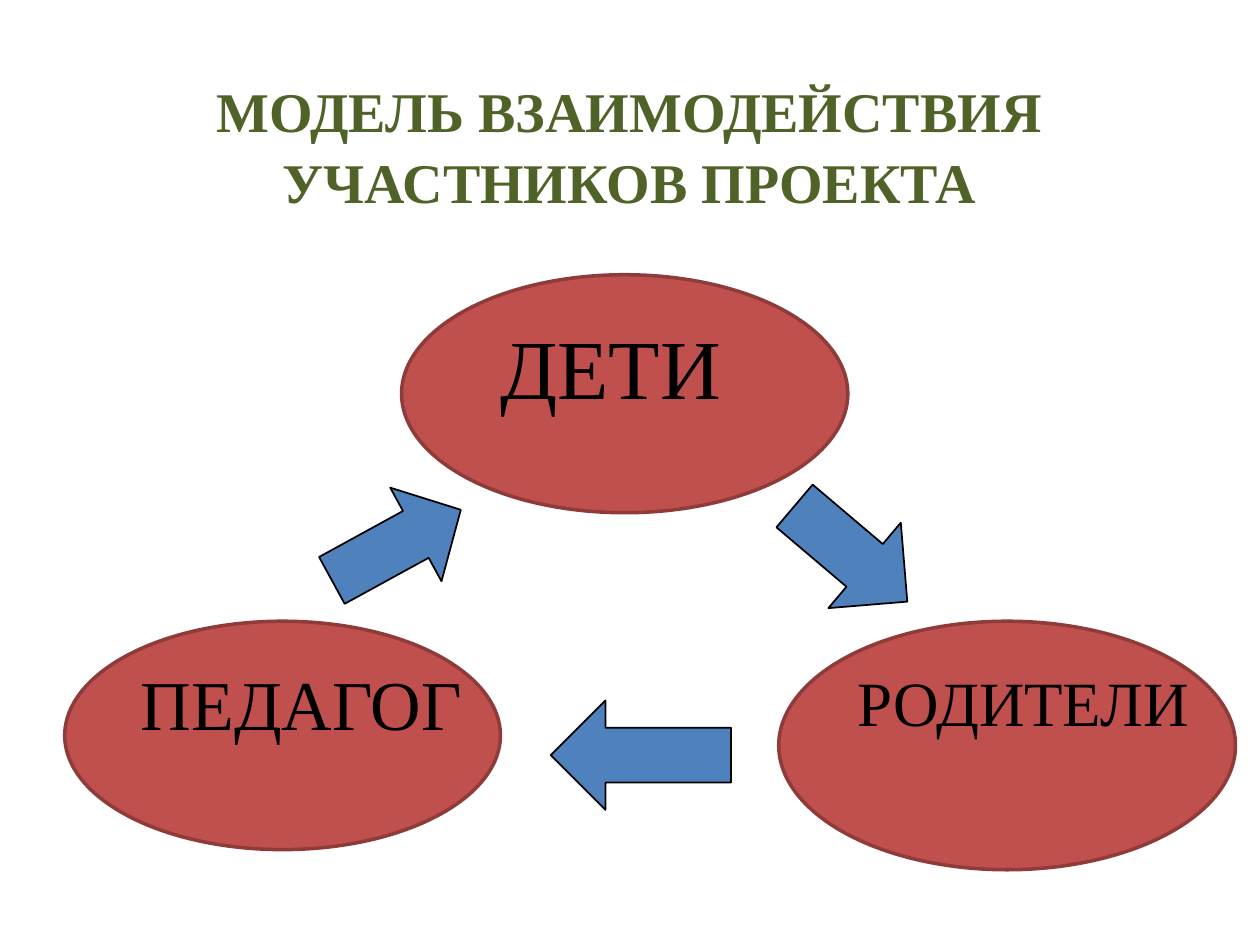
from dataclasses import dataclass

from pptx import Presentation
from pptx.dml.color import RGBColor
from pptx.enum.shapes import MSO_SHAPE
from pptx.enum.text import MSO_ANCHOR, PP_ALIGN
from pptx.shapes.autoshape import Shape
from pptx.slide import Slide
from pptx.text.text import Font
from pptx.util import Pt

FONT_NAME = "Times New Roman"
TITLE_COLOR = "4F6228"
OVAL_FILL = "C0504D"
OVAL_LINE = "8E3B39"
ARROW_FILL = "4F81BD"
BLACK = "000000"


@dataclass(frozen=True)
class Frame:
    left: float
    top: float
    width: float
    height: float

    def lengths(self) -> tuple[Pt, Pt, Pt, Pt]:
        return Pt(self.left), Pt(self.top), Pt(self.width), Pt(self.height)


@dataclass(frozen=True)
class Participant:
    name: str
    frame: Frame
    font_size: float


@dataclass(frozen=True)
class Arrow:
    kind: MSO_SHAPE
    frame: Frame
    rotation: float
    head_ratio: float


PARTICIPANTS = [
    Participant(" ДЕТИ", Frame(229.5, 157, 255, 136), 48),
    Participant("ПЕДАГОГ", Frame(37, 355, 249, 130.5), 40),
    Participant("РОДИТЕЛИ", Frame(445, 355, 261, 142), 36),
]

ARROWS = [
    Arrow(MSO_SHAPE.RIGHT_ARROW, Frame(184.5, 281, 84, 61), 331.3, 0.48),
    Arrow(MSO_SHAPE.RIGHT_ARROW, Frame(444, 284.5, 84.5, 64), 40.3, 0.5),
    Arrow(MSO_SHAPE.DOWN_ARROW, Frame(335, 380, 62.5, 103), 90, 0.5),
]


def color(value: str) -> RGBColor:
    return RGBColor.from_string(value)


def style_font(font: Font, size: float, value: str, bold: bool = False) -> None:
    font.name = FONT_NAME
    font.size = Pt(size)
    font.bold = bold
    font.color.rgb = color(value)


def add_filled_shape(page: Slide, kind: MSO_SHAPE, frame: Frame,
                     fill: str, line: str, line_width: float) -> Shape:
    shape = page.shapes.add_shape(kind, *frame.lengths())
    shape.shadow.inherit = False
    shape.fill.solid()
    shape.fill.fore_color.rgb = color(fill)
    shape.line.color.rgb = color(line)
    shape.line.width = Pt(line_width)
    return shape


def add_title(page: Slide, text: str, frame: Frame) -> None:
    box = page.shapes.add_textbox(*frame.lengths())
    box.text_frame.word_wrap = True
    box.text_frame.vertical_anchor = MSO_ANCHOR.MIDDLE
    para = box.text_frame.paragraphs[0]
    para.text = text
    para.alignment = PP_ALIGN.CENTER
    para.line_spacing = 1.05
    style_font(para.font, 32, TITLE_COLOR, bold=True)


def add_participant(page: Slide, participant: Participant) -> None:
    oval = add_filled_shape(page, MSO_SHAPE.OVAL, participant.frame,
                            OVAL_FILL, OVAL_LINE, 2)
    oval.text_frame.word_wrap = False
    oval.text_frame.vertical_anchor = MSO_ANCHOR.TOP
    para = oval.text_frame.paragraphs[0]
    para.text = participant.name
    para.alignment = PP_ALIGN.LEFT
    style_font(para.font, participant.font_size, BLACK)


def add_arrow(page: Slide, arrow: Arrow) -> None:
    shape = add_filled_shape(page, arrow.kind, arrow.frame, ARROW_FILL, BLACK, 1)
    shape.rotation = arrow.rotation
    shape.adjustments[0] = 0.5
    shape.adjustments[1] = arrow.head_ratio


def main() -> None:
    deck = Presentation()
    deck.slide_width, deck.slide_height = Pt(720), Pt(540)
    page = deck.slides.add_slide(deck.slide_layouts[6])
    add_title(page, "МОДЕЛЬ ВЗАИМОДЕЙСТВИЯ\vУЧАСТНИКОВ ПРОЕКТА",
              Frame(19.5, 20, 680.5, 124.5))
    for participant in PARTICIPANTS:
        add_participant(page, participant)
    for arrow in ARROWS:
        add_arrow(page, arrow)
    deck.save("out.pptx")


if __name__ == "__main__":
    main()
